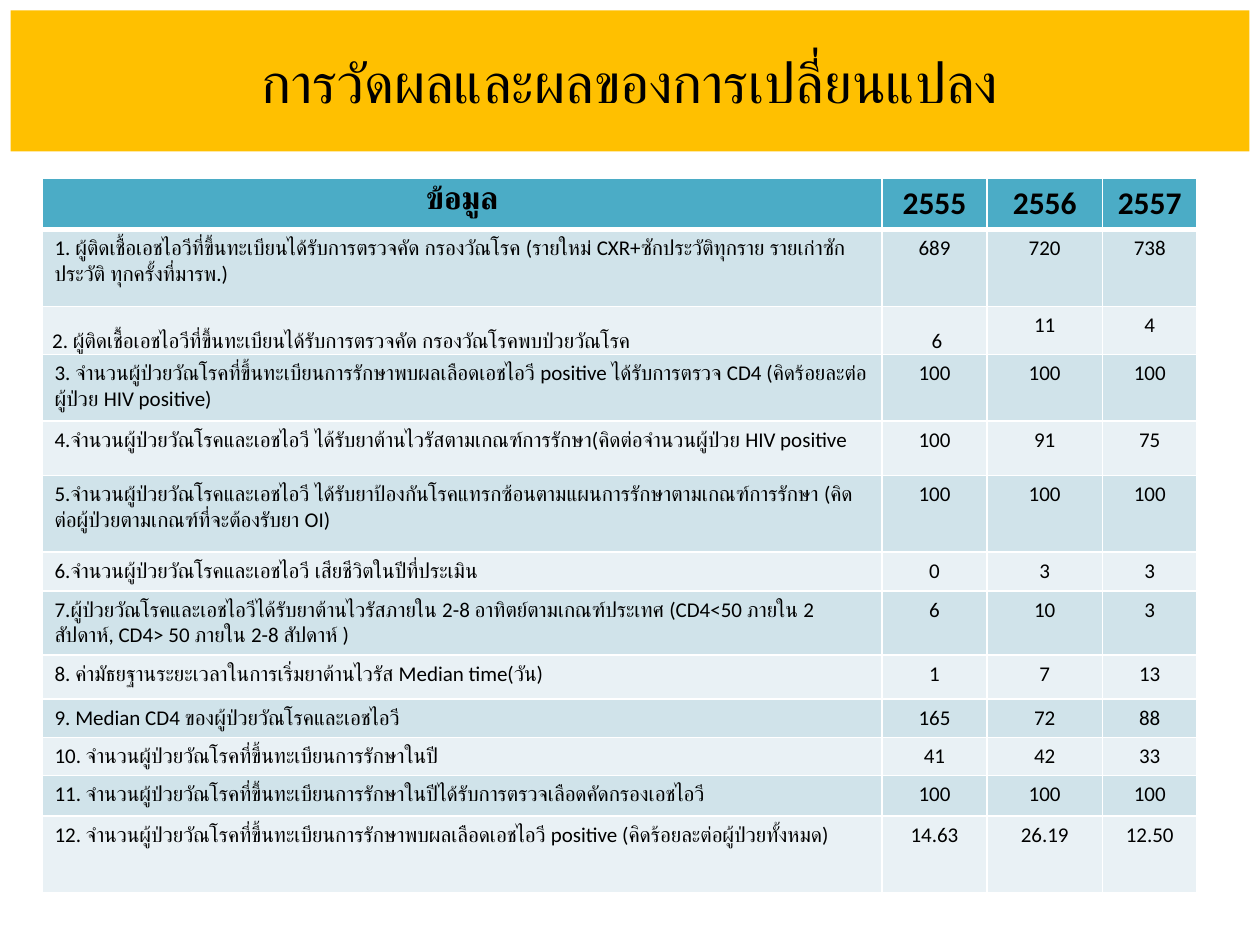
from lxml import etree
from pptx import Presentation
from pptx import util as u
from pptx.dml.color import RGBColor
from pptx.enum import shapes, text
from pptx.oxml import ns

Pt = u.Pt
MID = text.PP_ALIGN.CENTER
LEFT = text.PP_ALIGN.LEFT
HUES = {"gold": "FFC000", "head": "4BACC6", "odd": "D0E3EA",
        "even": "E9F1F5", "ink": "000000", "rule": "FFFFFF"}


def write(frame, words, size=12, bold=False, align=LEFT):
    para = frame.paragraphs[0]
    para.alignment = align
    run = para.add_run()
    run.text = words
    run.font.name = "Calibri"
    run.font.size = Pt(size)
    run.font.bold = bold
    run.font.color.rgb = RGBColor.from_string(HUES["ink"])


def edge(cell, side, width):
    """Draw one cell border; call before the cell gets its fill."""
    props = cell._tc.get_or_add_tcPr()
    line = etree.SubElement(props, ns.qn("a:" + side), w=str(Pt(width)))
    fill = etree.SubElement(line, ns.qn("a:solidFill"))
    etree.SubElement(fill, ns.qn("a:srgbClr"), val=HUES["rule"])


deck = Presentation()
deck.slide_width, deck.slide_height = Pt(720), Pt(540)
slide = deck.slides.add_slide(deck.slide_layouts[6])

# Table content: row height, label, one value per year
rows = [
    (25.2, "ข้อมูล", "2555", "2556", "2557"),
    (43.9, "1. ผู้ติดเชื้อเอชไอวีที่ขึ้นทะเบียนได้รับการตรวจคัด กรองวัณโรค (รายใหม่ CXR+ซักประวัติทุกราย รายเก่าซักประวัติ ทุกครั้งที่มารพ.)",
     "689", "720", "738"),
    (27.4, "2. ผู้ติดเชื้อเอชไอวีที่ขึ้นทะเบียนได้รับการตรวจคัด กรองวัณโรคพบป่วยวัณโรค",
     "6", "11", "4"),
    (38.2, "3. จำนวนผู้ป่วยวัณโรคที่ขึ้นทะเบียนการรักษาพบผลเลือดเอชไอวี positive ได้รับการตรวจ CD4 (คิดร้อยละต่อผู้ป่วย HIV positive)",
     "100", "100", "100"),
    (31, "4.จำนวนผู้ป่วยวัณโรคและเอชไอวี ได้รับยาต้านไวรัสตามเกณฑ์การรักษา(คิดต่อจำนวนผู้ป่วย HIV positive",
     "100", "91", "75"),
    (43.9, "5.จำนวนผู้ป่วยวัณโรคและเอชไอวี ได้รับยาป้องกันโรคแทรกซ้อนตามแผนการรักษาตามเกณฑ์การรักษา (คิดต่อผู้ป่วยตามเกณฑ์ที่จะต้องรับยา OI)",
     "100", "100", "100"),
    (22.3, "6.จำนวนผู้ป่วยวัณโรคและเอชไอวี เสียชีวิตในปีที่ประเมิน", "0", "3", "3"),
    (31, "7.ผู้ป่วยวัณโรคและเอชไอวีได้รับยาต้านไวรัสภายใน 2-8 อาทิตย์ตามเกณฑ์ประเทศ (CD4<50 ภายใน 2 สัปดาห์, CD4> 50 ภายใน 2-8 สัปดาห์ )",
     "6", "10", "3"),
    (25.2, "8. ค่ามัธยฐานระยะเวลาในการเริ่มยาต้านไวรัส Median time(วัน)", "1", "7", "13"),
    (19.4, "9. Median CD4 ของผู้ป่วยวัณโรคและเอชไอวี", "165", "72", "88"),
    (19.4, "10. จำนวนผู้ป่วยวัณโรคที่ขึ้นทะเบียนการรักษาในปี", "41", "42", "33"),
    (23, "11. จำนวนผู้ป่วยวัณโรคที่ขึ้นทะเบียนการรักษาในปีได้รับการตรวจเลือดคัดกรองเอชไอวี",
     "100", "100", "100"),
    (43.9, "12. จำนวนผู้ป่วยวัณโรคที่ขึ้นทะเบียนการรักษาพบผลเลือดเอชไอวี positive (คิดร้อยละต่อผู้ป่วยทั้งหมด)",
     "14.63", "26.19", "12.50"),
]
widths = [480, 60, 66, 54]

# Results table
table = slide.shapes.add_table(len(rows), len(widths), Pt(24), Pt(102),
                               Pt(sum(widths)), Pt(sum(r[0] for r in rows))).table
for col, width in zip(table.columns, widths):
    col.width = Pt(width)
for i, (height, *cells) in enumerate(rows):
    table.rows[i].height = Pt(height)
    hue = "head" if i == 0 else "odd" if i % 2 else "even"
    for j, words in enumerate(cells):
        cell = table.cell(i, j)
        for side in ("lnL", "lnR", "lnT", "lnB"):
            thick = (i, side) in ((0, "lnB"), (1, "lnT"))
            edge(cell, side, 3 if thick else 1)
        cell.fill.solid()
        cell.fill.fore_color.rgb = RGBColor.from_string(HUES[hue])
        write(cell.text_frame, words, size=12 if i else 18, bold=i == 0,
              align=MID if i == 0 or j else LEFT)

# Row 2 sets its label and first value on the bottom edge
for j, inset in enumerate((5.8, 3.5)):
    cell = table.cell(2, j)
    cell.vertical_anchor = text.MSO_ANCHOR.BOTTOM
    cell.margin_left = Pt(inset)
    cell.margin_right = cell.margin_top = Pt(0.7)
    cell.margin_bottom = Pt(0)

# Title band
band = slide.shapes.add_shape(shapes.MSO_SHAPE.RECTANGLE,
                              Pt(6), Pt(6), Pt(708), Pt(80.5))
band.shadow.inherit = False
band.fill.solid()
band.fill.fore_color.rgb = RGBColor.from_string(HUES["gold"])
band.line.fill.background()
band.text_frame.word_wrap = True
band.text_frame.vertical_anchor = text.MSO_ANCHOR.MIDDLE
write(band.text_frame, "การวัดผลและผลของการเปลี่ยนแปลง", size=32, align=MID)

deck.save("out.pptx")
